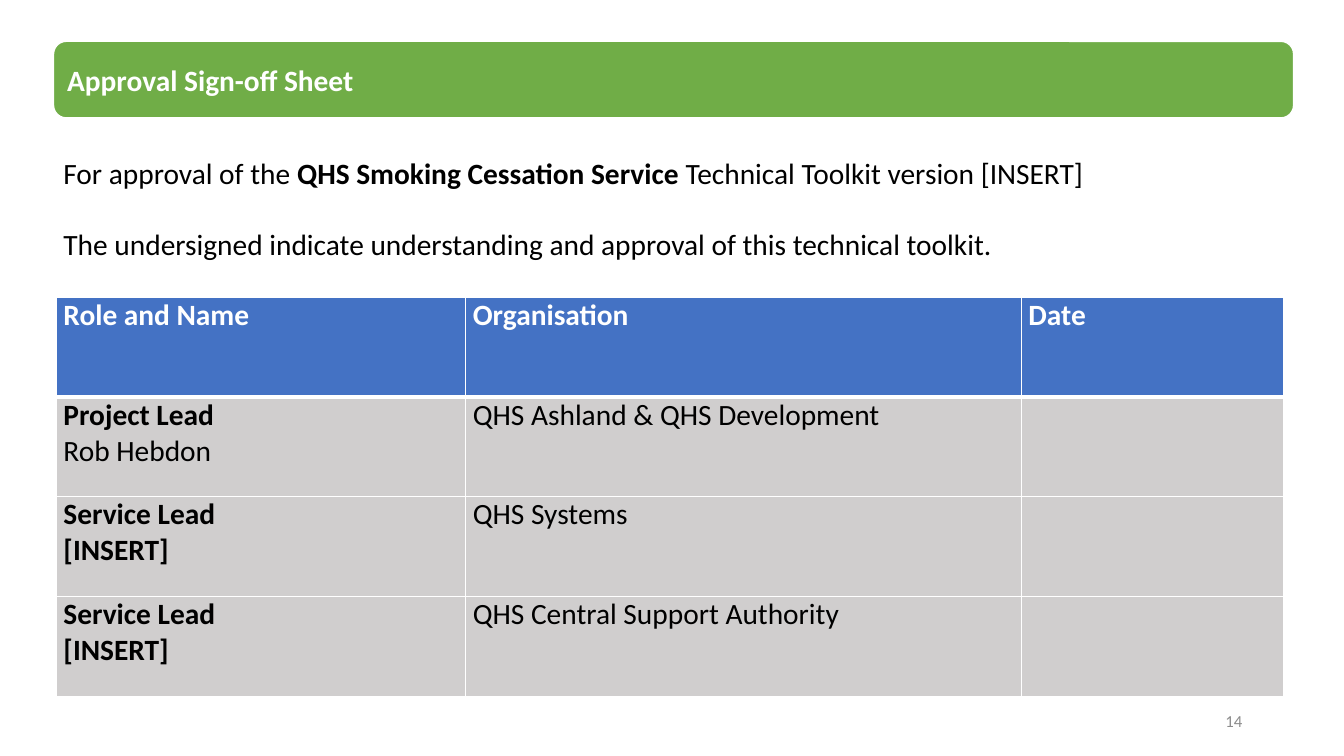
from dataclasses import dataclass

from lxml.etree import SubElement
from pptx import Presentation
from pptx.dml.color import RGBColor as Color
from pptx.enum.shapes import MSO_SHAPE as Shape
from pptx.enum.text import MSO_ANCHOR as Anchor, PP_ALIGN as Align
from pptx.oxml.ns import qn
from pptx.util import Inches, Pt

SLIDE_WIDTH, SLIDE_HEIGHT = Inches(13.33), Inches(7.5)


@dataclass(frozen=True)
class Theme:
    font: str = "Calibri"
    text_size: float = 21
    number_size: float = 12
    paragraph_gap: float = 25.6
    white: str = "FFFFFF"
    black: str = "000000"
    green: str = "70AD47"
    blue: str = "4472C4"
    grey: str = "D0CECE"
    number_grey: str = "8C8C8C"


THEME = Theme()

# Each paragraph is a list of (text, bold) runs
INTRODUCTION = [
    [("For approval of the ", False),
     ("QHS Smoking Cessation Service ", True),
     ("Technical Toolkit version [INSERT]", False)],
    [("The undersigned indicate understanding and approval of this technical toolkit.", False)],
]
HEADINGS = ["Role and Name", "Organisation", "Date"]
# Role, name, whether the name is bold, organisation
SIGNATORIES = [
    ("Project Lead", "Rob Hebdon", False, "QHS Ashland & QHS Development"),
    ("Service Lead", "[INSERT]", True, "QHS Systems"),
    ("Service Lead", "[INSERT]", True, "QHS Central Support Authority"),
]
COLUMN_SHARES = [30.46, 41.34, 19.5]
ROW_SHARE = 13.2


def across(percent):
    return round(SLIDE_WIDTH * percent / 100)


def down(percent):
    return round(SLIDE_HEIGHT * percent / 100)


def area(left, top, width, height):
    """Turn percentages of the slide into a position and size."""
    return across(left), down(top), across(width), down(height)


def write(frame, paragraphs, color, size=THEME.text_size, align=Align.LEFT, gap=0):
    for index, runs in enumerate(paragraphs):
        paragraph = frame.add_paragraph() if index else frame.paragraphs[0]
        paragraph.alignment = align
        if index:
            paragraph.space_before = Pt(gap)
        for text, bold in runs:
            run = paragraph.add_run()
            run.text = text
            run.font.name = THEME.font
            run.font.size = Pt(size)
            run.font.bold = bold
            run.font.color.rgb = Color.from_string(color)


def add_banner(slide, title, place):
    banner = slide.shapes.add_shape(Shape.ROUNDED_RECTANGLE, *place)
    banner.shadow.inherit = False
    banner.fill.solid()
    banner.fill.fore_color.rgb = Color.from_string(THEME.green)
    banner.line.color.rgb = Color.from_string(THEME.white)
    banner.line.width = Pt(1)
    frame = banner.text_frame
    frame.margin_left = Inches(0.1)
    frame.vertical_anchor = Anchor.MIDDLE
    write(frame, [[(title, True)]], THEME.white)


def add_text(slide, paragraphs, place, color, anchor=Anchor.TOP, **style):
    frame = slide.shapes.add_textbox(*place).text_frame
    frame.word_wrap = True
    frame.vertical_anchor = anchor
    write(frame, paragraphs, color, **style)


def set_borders(cell, bottom_width):
    properties = cell._tc.get_or_add_tcPr()
    widths = {"lnL": 1, "lnR": 1, "lnT": 1, "lnB": bottom_width}
    for index, (side, width) in enumerate(widths.items()):
        line = SubElement(properties, qn(f"a:{side}"), w=str(Pt(width)))
        fill = SubElement(line, qn("a:solidFill"))
        SubElement(fill, qn("a:srgbClr"), val=THEME.white)
        properties.insert(index, line)  # borders come before the fill


def fill_cell(cell, paragraphs, fill, color, bottom_width=1):
    cell.margin_left = cell.margin_right = Inches(0.07)
    cell.margin_top = cell.margin_bottom = 0
    cell.fill.solid()
    cell.fill.fore_color.rgb = Color.from_string(fill)
    set_borders(cell, bottom_width)
    write(cell.text_frame, paragraphs, color)


def add_signoff_table(slide, left, top):
    row_count = len(SIGNATORIES) + 1
    place = area(left, top, sum(COLUMN_SHARES), ROW_SHARE * row_count)
    table = slide.shapes.add_table(row_count, len(HEADINGS), *place).table
    for column, share in zip(table.columns, COLUMN_SHARES):
        column.width = across(share)
    for row in table.rows:
        row.height = down(ROW_SHARE)

    # Heading row
    for column, heading in enumerate(HEADINGS):
        fill_cell(table.cell(0, column), [[(heading, True)]], THEME.blue, THEME.white, 3)

    # One row for each signatory, with the date left open
    for row, (role, name, bold_name, organisation) in enumerate(SIGNATORIES, 1):
        contents = [[[(role, True)], [(name, bold_name)]], [[(organisation, False)]], []]
        for column, paragraphs in enumerate(contents):
            fill_cell(table.cell(row, column), paragraphs, THEME.grey, THEME.black)


def main():
    presentation = Presentation()
    presentation.slide_width, presentation.slide_height = SLIDE_WIDTH, SLIDE_HEIGHT
    slide = presentation.slides.add_slide(presentation.slide_layouts[6])

    add_banner(slide, "Approval Sign-off Sheet", area(3.98, 5.47, 92.27, 10.13))
    add_text(slide, [[("14", False)]], area(70.67, 92.67, 22.5, 5.33), THEME.number_grey,
             Anchor.MIDDLE, size=THEME.number_size, align=Align.RIGHT)
    add_signoff_table(slide, 4.2, 39.33)
    add_text(slide, INTRODUCTION, area(3.98, 19.87, 91.67, 19.47), THEME.black,
             gap=THEME.paragraph_gap)

    presentation.save("out.pptx")


if __name__ == "__main__":
    main()
